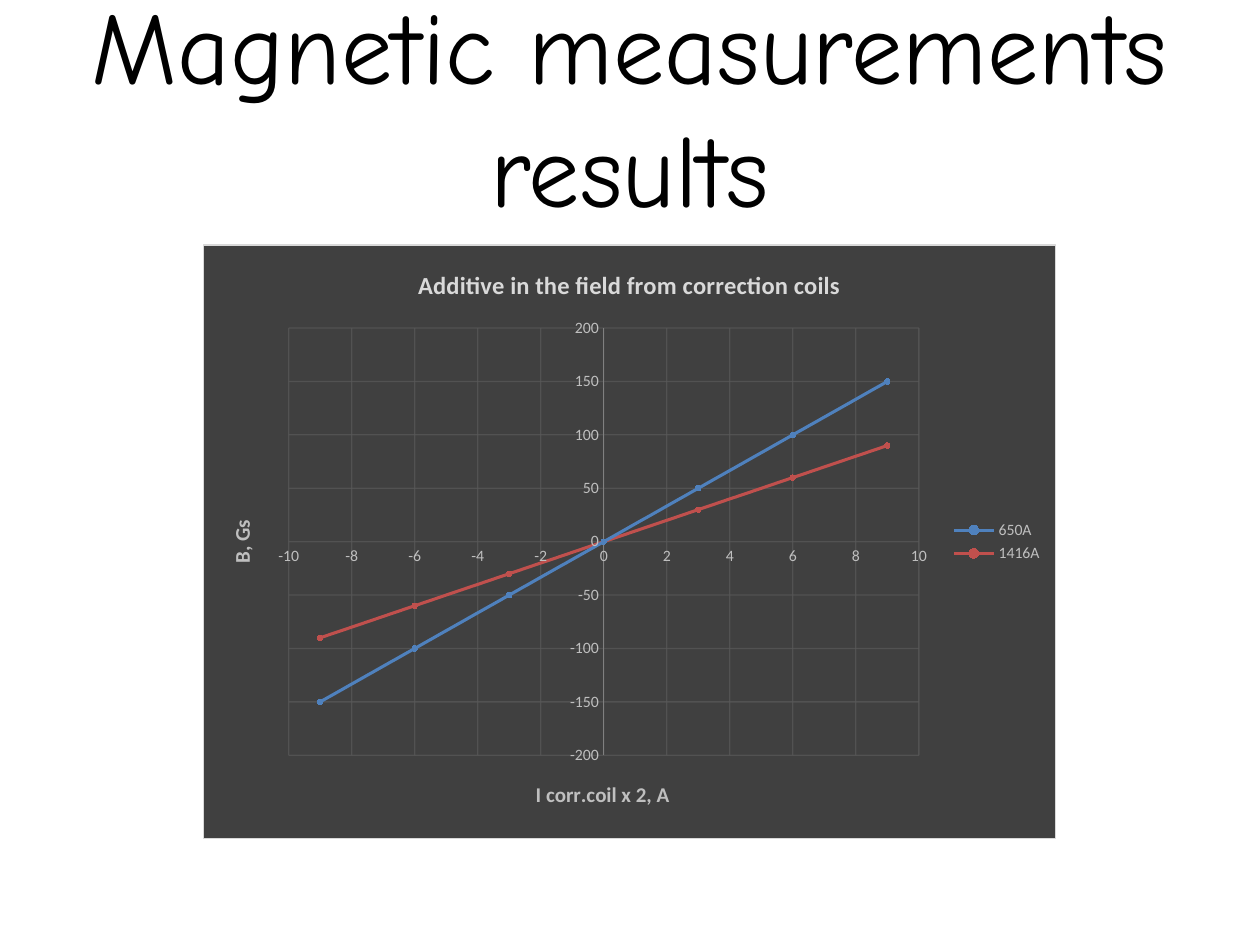
"""Build a slide with a title and a scatter chart of magnetic measurements."""
from lxml import etree
from pptx import Presentation
from pptx.chart.data import XyChartData
from pptx.dml.color import RGBColor
from pptx.enum.chart import XL_CHART_TYPE as ChartType, XL_LEGEND_POSITION as LegendPosition
from pptx.enum.chart import XL_MARKER_STYLE as MarkerStyle, XL_TICK_MARK as TickMark
from pptx.enum.text import MSO_ANCHOR as Anchor, PP_ALIGN as Align
from pptx.oxml import parse_xml
from pptx.oxml.ns import nsdecls, qn
from pptx.util import Inches, Pt

CURRENTS = range(-9, 10, 3)
SERIES = [("650A", range(-150, 151, 50), "4F81BD", "95B3D7"),
          ("1416A", range(-90, 91, 30), "C0504D", "D99694")]
PLOT_AREA = {"x": 0.10, "y": 0.14, "w": 0.74, "h": 0.72}


def color(value):
    return RGBColor.from_string(value)


class SlideBuilder:
    title_font = "Comic Neue"
    chart_font = "Calibri"
    muted = "BFBFBF"
    grid = "595959"

    def __init__(self, deck):
        self.page = deck.slides.add_slide(deck.slide_layouts[6])

    def style(self, font, name, size, shade, bold=False):
        font.name, font.size, font.bold = name, Pt(size), bold
        font.color.rgb = color(shade)

    def line(self, line, shade, width):
        line.color.rgb = color(shade)
        line.width = Pt(width)

    def title(self, text, left, top, width, height):
        box = self.page.shapes.add_textbox(Inches(left), Inches(top), Inches(width), Inches(height))
        frame = box.text_frame
        frame.word_wrap = True
        frame.vertical_anchor = Anchor.MIDDLE
        frame.text = text
        para = frame.paragraphs[0]
        para.alignment = Align.CENTER
        self.style(para.runs[0].font, self.title_font, 58.5, "000000")

    def chart_text(self, frame, text, size, shade):
        frame.text = text
        self.style(frame.paragraphs[0].runs[0].font, self.chart_font, size, shade, True)

    def axis(self, axis, title, limit, step):
        axis.minimum_scale, axis.maximum_scale, axis.major_unit = -limit, limit, step
        axis.major_tick_mark = axis.minor_tick_mark = TickMark.NONE
        axis.has_major_gridlines = True
        grid = axis.major_gridlines.format.line
        self.line(grid, self.grid, 0.75)
        for shade in axis.major_gridlines._xAx.iter(qn("a:srgbClr")):
            etree.SubElement(shade, qn("a:alpha"), val="75000")
        self.chart_text(axis.axis_title.text_frame, title, 12, self.muted)
        self.style(axis.tick_labels.font, self.chart_font, 9, self.muted)
        axis.tick_labels.number_format = "General"
        axis.tick_labels.number_format_is_linked = False

    def chart_frame(self, chart, fill, border):
        solid = '<a:solidFill><a:srgbClr val="{}"/></a:solidFill>'
        properties = parse_xml(
            f'<c:spPr {nsdecls("c", "a")}>{solid.format(fill)}'
            f'<a:ln w="{Pt(0.75)}">{solid.format(border)}</a:ln></c:spPr>')
        chart._chartSpace.find(qn("c:chart")).addnext(properties)

    def plot_layout(self, chart):
        area = chart._chartSpace.chart.plotArea
        for old in area.findall(qn("c:layout")):
            area.remove(old)
        layout = etree.Element(qn("c:layout"))
        manual = etree.SubElement(layout, qn("c:manualLayout"))
        settings = {"layoutTarget": "inner", "xMode": "edge", "yMode": "edge", **PLOT_AREA}
        for name, value in settings.items():
            etree.SubElement(manual, qn(f"c:{name}"), val=str(value))
        area.insert(0, layout)

    def scatter(self, title, left, top, width, height):
        data = XyChartData()
        for name, fields, _, _ in SERIES:
            series = data.add_series(name)
            for current, field in zip(CURRENTS, fields):
                series.add_data_point(current, field)
        chart = self.page.shapes.add_chart(
            ChartType.XY_SCATTER_SMOOTH, Inches(left), Inches(top),
            Inches(width), Inches(height), data).chart
        self.style(chart.font, self.chart_font, 10, "000000")
        self.chart_frame(chart, "404040", "D9D9D9")
        self.plot_layout(chart)
        chart.has_title = True
        self.chart_text(chart.chart_title.text_frame, title, 14, "D9D9D9")
        chart.has_legend = True
        chart.legend.position = LegendPosition.RIGHT
        chart.legend.include_in_layout = False
        self.style(chart.legend.font, self.chart_font, 9, self.muted)
        self.axis(chart.category_axis, "I corr.coil x 2, A", 10, 2)
        chart.category_axis.format.line.fill.background()
        self.axis(chart.value_axis, "B, Gs", 200, 50)
        self.line(chart.value_axis.format.line, "808080", 0.75)
        chart.plots[0].vary_by_categories = False
        for series, (_, _, shade, tint) in zip(chart.plots[0].series, SERIES):
            self.line(series.format.line, shade, 1.75)
            series._element.find(qn("c:smooth")).set("val", "1")
            marker = series.marker
            marker.style, marker.size = MarkerStyle.CIRCLE, 3
            marker.format.fill.solid()
            marker.format.fill.fore_color.rgb = color(tint)
            self.line(marker.format.line, shade, 0.75)


def main():
    deck = Presentation()
    deck.slide_width, deck.slide_height = Inches(10), Inches(7.5)
    builder = SlideBuilder(deck)
    builder.title("Magnetic measurements results", 0.5, 0.21, 9, 1.25)
    builder.scatter("Additive in the field from correction coils", 1.61, 1.94, 6.77, 4.72)
    deck.save("out.pptx")


if __name__ == "__main__":
    main()
